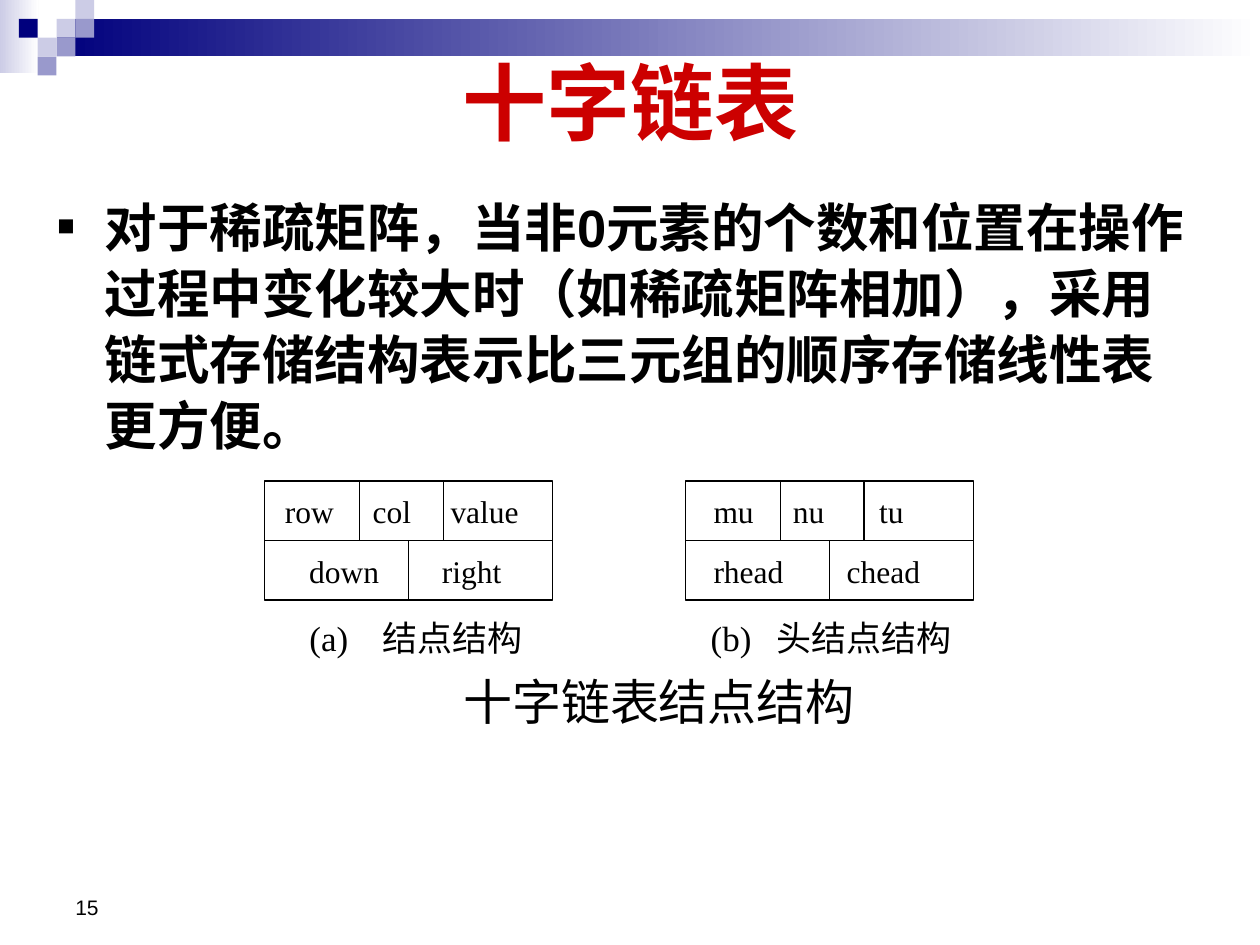
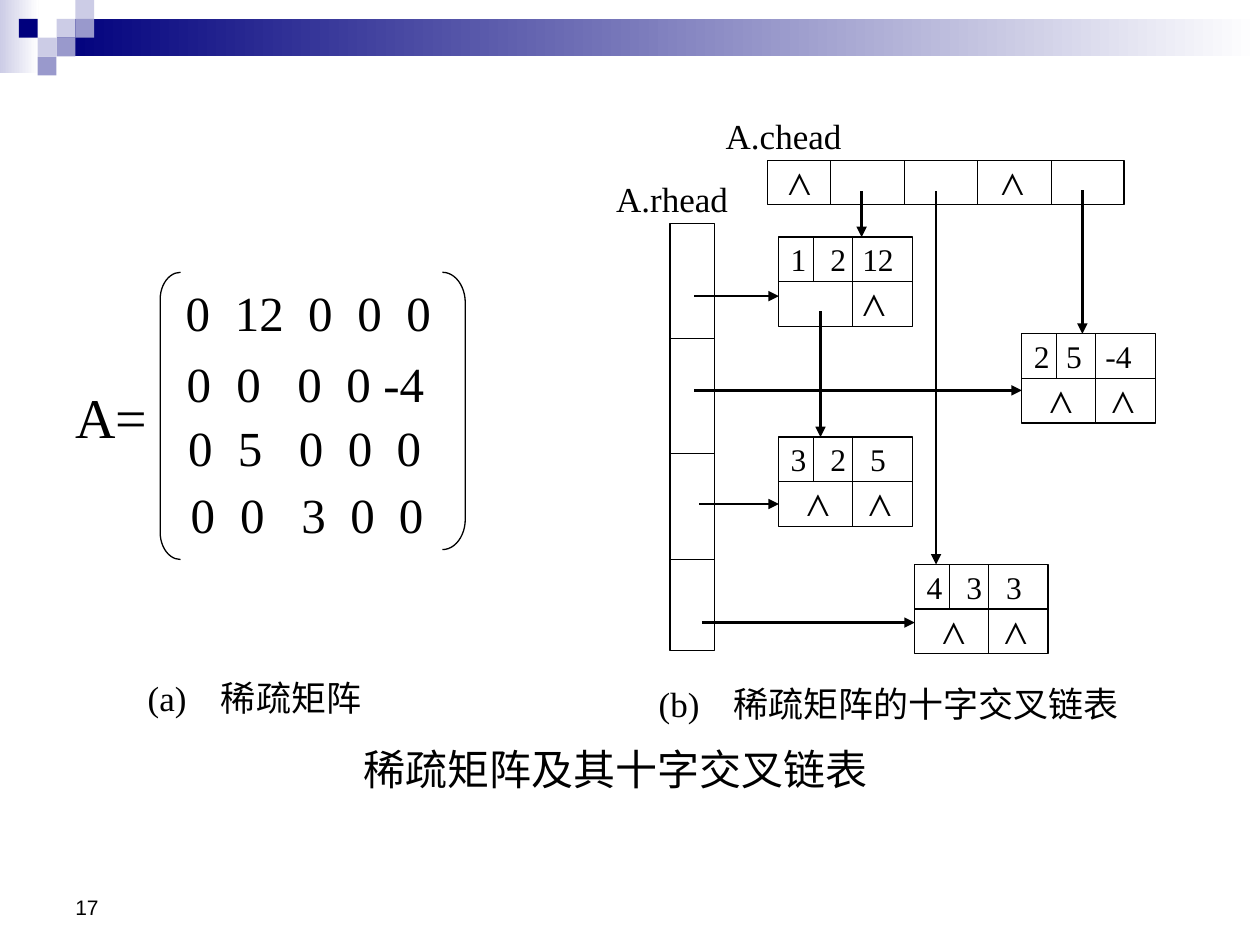
from lxml import etree
from pptx import Presentation
from pptx.dml.color import RGBColor
from pptx.enum.shapes import MSO_CONNECTOR, MSO_SHAPE
from pptx.enum.text import MSO_ANCHOR, PP_ALIGN
from pptx.oxml.ns import qn
from pptx.util import Cm, Pt

RECT = MSO_SHAPE.RECTANGLE
LEFT_BRACKET, RIGHT_BRACKET = MSO_SHAPE.LEFT_BRACKET, MSO_SHAPE.RIGHT_BRACKET
STRAIGHT = MSO_CONNECTOR.STRAIGHT
LEFT, CENTER = PP_ALIGN.LEFT, PP_ALIGN.CENTER
TOP, MIDDLE, BOTTOM = MSO_ANCHOR.TOP, MSO_ANCHOR.MIDDLE, MSO_ANCHOR.BOTTOM

COLORS = {"black": "000000", "white": "FFFFFF", "title": "CC0000",
          "navy": "00007D", "mid": "9999CC", "pale": "CCCCE6"}
SANS, SERIF = "Arial", "Times New Roman"
NIL = "⋀"


def rgb(name):
    return RGBColor.from_string(COLORS[name])


def add(parent, tag, **attrs):
    """Append a DrawingML child element."""
    return etree.SubElement(parent, qn(tag), attrs)


# ---- element kinds ----
def write(sp, text, size=18, font=SERIF, color="black", bold=False, align=LEFT,
          anchor=MIDDLE, inset=(0, 0), stops=()):
    """Write text into a shape; stops are centred tab positions in cm."""
    tf = sp.text_frame
    tf.word_wrap = True
    tf.vertical_anchor = anchor
    tf.margin_left = tf.margin_right = Cm(inset[0])
    tf.margin_top = tf.margin_bottom = Cm(inset[1])
    p = tf.paragraphs[0]
    p.alignment = align
    r = p.add_run()
    r.text = text
    r.font.size, r.font.name, r.font.bold = Pt(size), font, bold
    r.font.color.rgb = rgb(color)
    if stops:
        tabs = add(p._p.get_or_add_pPr(), "a:tabLst")
        for stop in stops:
            add(tabs, "a:tab", pos=str(Cm(stop)), algn="ctr")
    return p


def label(s, text, x, y, w, h, **fmt):
    return write(s.shapes.add_textbox(Cm(x), Cm(y), Cm(w), Cm(h)), text, **fmt)


def columns(cells):
    """Put each cell text behind its own tab."""
    return "".join("\t" + cell for cell in cells)


def shape(s, kind, x, y, w, h, fill=None, fade=False, outline=False):
    sp = s.shapes.add_shape(kind, Cm(x), Cm(y), Cm(w), Cm(h))
    sp.shadow.inherit = False
    if fade:
        sp.fill.gradient()
        sp.fill.gradient_angle = 0
        for stop, name in zip(sp.fill.gradient_stops, (fill, "white")):
            stop.color.rgb = rgb(name)
    elif fill:
        sp.fill.solid()
        sp.fill.fore_color.rgb = rgb(fill)
    else:
        sp.fill.background()
    if outline:
        sp.line.color.rgb = rgb("black")
        sp.line.width = Pt(0.75)
    else:
        sp.line.fill.background()
    return sp


def line(s, x1, y1, x2, y2, width=0.75, arrow=False):
    c = s.shapes.add_connector(STRAIGHT, Cm(x1), Cm(y1), Cm(x2), Cm(y2))
    c.line.color.rgb = rgb("black")
    c.line.width = Pt(width)
    if arrow:
        add(c.line._get_or_add_ln(), "a:tailEnd", type="triangle")
    add(c._element.spPr, "a:effectLst")
    return c


def pointer(s, x1, y1, x2, y2):
    return line(s, x1, y1, x2, y2, width=1.5, arrow=True)


def record(s, x, y, w, h, dividers, cells, stops):
    """A box split by vertical dividers, with one text per field."""
    sp = shape(s, RECT, x, y, w, h, outline=True)
    write(sp, columns(cells), stops=stops)
    for d in dividers:
        c = line(s, x + d, y, x + d, y + h)
        if d == w / 2:
            c.begin_connect(sp, 0)
            c.end_connect(sp, 2)
    return sp


def caption(s, mark, text, x, y, w, h, stops):
    label(s, columns((mark, text)), x, y, w, h, size=20, stops=stops)


def base_slide(prs, number):
    """Blank slide with the band, the corner squares and the page number."""
    s = prs.slides.add_slide(prs.slide_layouts[6])
    shape(s, RECT, 0, 0, 0.78, 1.48, "pale", fade=True)
    shape(s, RECT, 1.14, 0.38, 24.26, 0.76, "navy", fade=True)
    side = 0.38
    for col, row, fill in ((3, 1, "pale"), (4, 0, "pale"), (4, 1, "mid"),
                           (2, 2, "pale"), (1, 1, "navy"), (3, 2, "mid"),
                           (2, 3, "mid")):
        shape(s, RECT, col * side, row * side, side, side, fill)
    label(s, str(number), 1.27, 17.35, 5.92, 1.32, size=12, font=SANS,
          anchor=BOTTOM, inset=(0.25, 0.13))
    return s


# ---- slides ----
def node_structure(prs):
    s = base_slide(prs, 15)
    label(s, "十字链表", 2.34, 0.94, 20.75, 2.18, size=48, font=SANS,
          color="title", bold=True, align=CENTER, inset=(0.25, 0.13))

    # bulleted statement
    p = label(s, "对于稀疏矩阵，当非0元素的个数和位置在操作过程中变化较大时"
              "（如稀疏矩阵相加），采用链式存储结构表示比三元组的顺序存储"
              "线性表更方便。", 0.91, 3.73, 23.6, 13.92, size=30, font=SANS,
              bold=True, anchor=TOP, inset=(0.25, 0.13))
    p.line_spacing, p.space_before = 1.05, Pt(4.5)
    pPr = p._p.get_or_add_pPr()
    pPr.set("marL", str(Cm(0.95)))
    pPr.set("indent", str(-Cm(0.95)))
    add(add(pPr, "a:buClr"), "a:srgbClr", val=COLORS["black"])
    add(pPr, "a:buSzPct", val="55000")
    add(pPr, "a:buFont", typeface=SANS)
    add(pPr, "a:buChar", char="■")

    # node layouts
    w, h, y = 5.8, 1.2, 9.7
    for x, fields, field_stops, links, link_stops in (
            (5.34, ("row", "col", "value"), (0.9, 2.56, 4.43),
             ("down", "right"), (1.6, 4.17)),
            (13.82, ("mu", "nu", "tu"), (0.97, 2.48, 4.15),
             ("rhead", "chead"), (1.27, 3.99))):
        record(s, x, y, w, h, (1.91, 3.6), fields, field_stops)
        record(s, x, y + h, w, h, (w / 2,), links, link_stops)

    # captions
    caption(s, "(a)", "结点结构", 5.56, 12.32, 5.72, 1.07, (1.07, 3.57))
    caption(s, "(b)", "头结点结构", 14.02, 12.32, 5.51, 1.07, (0.72, 3.4))
    label(s, "十字链表结点结构", 8.74, 13.59, 9.09, 1.07, size=28, align=CENTER)


def matrix(s):
    label(s, "A=", 1.52, 7.9, 1.65, 0.99, size=32)
    stops = (0.48, 1.48, 2.71, 3.7, 4.68)
    for x, y, values, row_stops in (
            (3.51, 5.84, "0 12 0 0 0", (0.48, 1.72, 2.95, 3.94, 4.93)),
            (3.53, 7.26, "0 0 0 0 -4", (0.48, 1.48, 2.71, 3.7, 4.61)),
            (3.56, 8.56, "0 5 0 0 0", stops),
            (3.61, 9.91, "0 0 3 0 0", stops)):
        label(s, columns(values.split()), x, y, 5.97, 0.91, size=28,
              stops=row_stops)
    for kind, x, w, h in ((LEFT_BRACKET, 3.23, 0.41, 5.79),
                          (RIGHT_BRACKET, 8.92, 0.46, 5.59)):
        sp = shape(s, kind, x, 5.49, w, h, outline=True)
        sp.adjustments[0] = 1.33


def cross_list(s):
    h = 0.9
    # column and row heads
    for text, x, y in (("A.chead", 14.63, 2.24), ("A.rhead", 12.42, 3.51)):
        label(s, text, x, y, 2.8, 0.99, size=20)
    record(s, 15.47, 3.23, 7.19, h, (1.27, 2.77, 4.24, 5.72), (NIL, NIL),
           (0.65, 4.94))
    shape(s, RECT, 13.51, 4.5, h, 8.61, outline=True)
    for y in (6.83, 9.14, 11.28):
        line(s, 13.51, y, 13.51 + h, y)

    # nodes: row, column and value above the two links
    w, stops, nil_stops = 2.69, (0.4, 1.2, 2.0), (0.79, 2.04)
    links = {}
    for x, y, fields, field_stops, nils, link_stops in (
            (15.7, 4.78, "1 2 12", stops, (NIL,), (1.92,)),
            (15.7, 8.81, "3 2 5", stops, (NIL, NIL), nil_stops),
            (20.6, 6.73, "2 5 -4", (0.4, 1.05, 1.95), (NIL, NIL), nil_stops),
            (18.44, 11.38, "4 3 3", stops, (NIL, NIL), nil_stops)):
        record(s, x, y, w, h, (0.7, 1.48), fields.split(), field_stops)
        links[fields] = record(s, x, y + h, w, h, (1.48,), nils, link_stops)

    # column pointers
    for x, y1, y2 in ((17.37, 3.86, 4.78), (18.87, 3.86, 11.38),
                      (21.82, 3.84, 6.73), (16.54, 6.27, 8.81)):
        pointer(s, x, y1, x, y2)
    # row pointers
    for x1, x2, y in ((14, 15.7, 5.97), (14, 20.6, 7.87), (14.15, 18.44, 12.55)):
        pointer(s, x1, y, x2, y)
    pointer(s, 14.1, 10.16, 15.7, 10.16).end_connect(links["3 2 5"], 1)


def sparse_matrix(prs):
    s = base_slide(prs, 17)
    matrix(s)
    cross_list(s)
    caption(s, "(a)", "稀疏矩阵", 2.49, 13.64, 5.28, 0.84, (0.88, 3.38))
    caption(s, "(b)", "稀疏矩阵的十字交叉链表", 12.88, 13.77, 10.08, 0.84,
            (0.81, 5.79))
    label(s, "稀疏矩阵及其十字交叉链表", 6.38, 14.96, 12.07, 1.07, size=24,
          align=CENTER)


def main():
    prs = Presentation()
    prs.slide_width, prs.slide_height = Cm(25.4), Cm(19.05)
    node_structure(prs)
    sparse_matrix(prs)
    prs.save("out.pptx")


if __name__ == "__main__":
    main()
